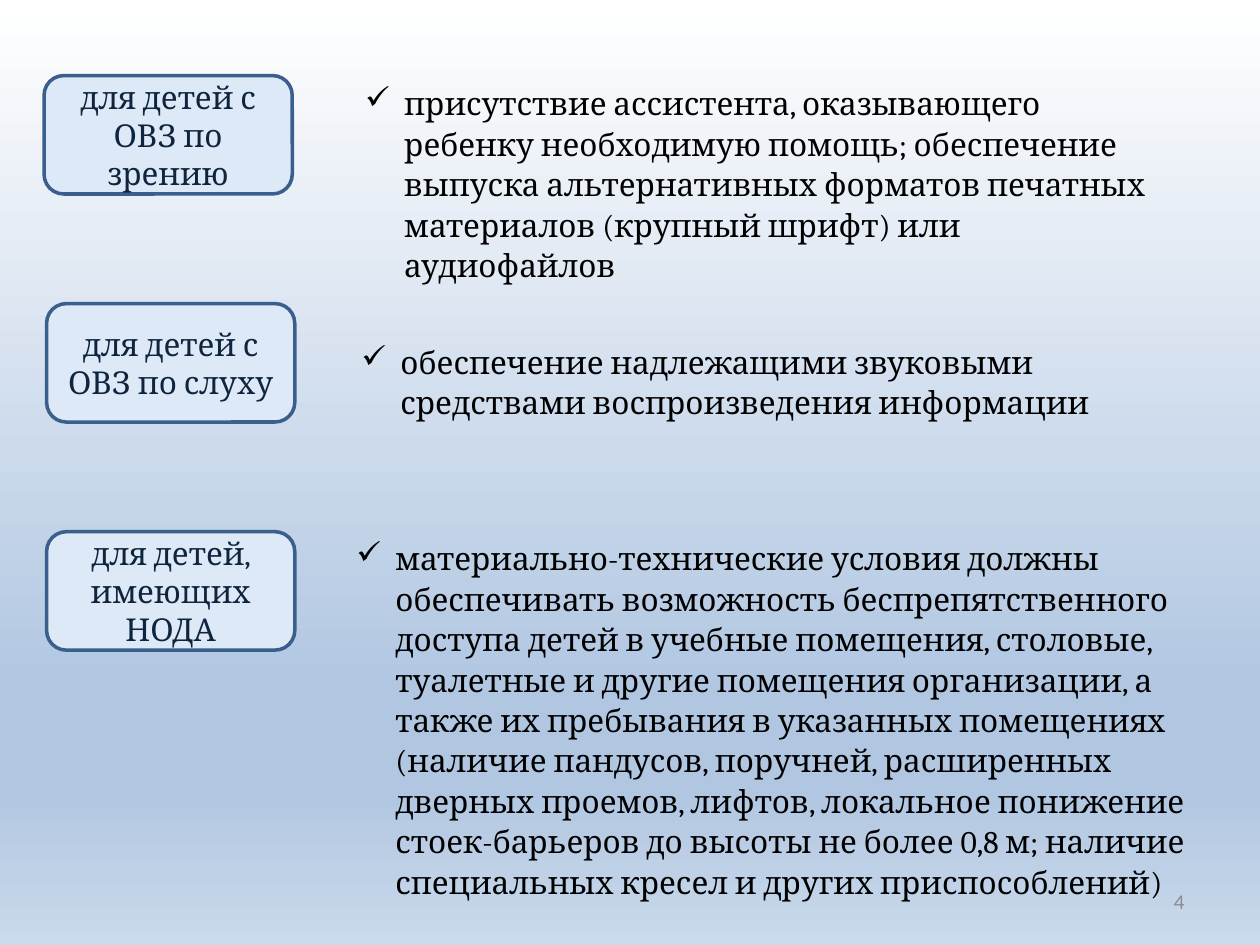
"""Build a slide on learning conditions for three groups of children."""
from dataclasses import dataclass

from lxml.etree import SubElement
from pptx import Presentation
from pptx.dml.color import RGBColor
from pptx.enum.shapes import MSO_SHAPE
from pptx.enum.text import MSO_ANCHOR, PP_ALIGN
from pptx.oxml.ns import qn
from pptx.slide import Slide
from pptx.text.text import TextFrame
from pptx.util import Inches, Pt

BLACK = RGBColor(0x00, 0x00, 0x00)
GREY = RGBColor(0x8C, 0x8C, 0x8C)
NAVY = RGBColor(0x0F, 0x24, 0x3E)
BLUE = RGBColor(0x3A, 0x5F, 0x8C)
PALE_BLUE = RGBColor(0xDD, 0xE9, 0xF7)
BACKGROUND_STOPS = (
    (0, RGBColor(0xFF, 0xFF, 0xFF)),
    (74, RGBColor(0xB0, 0xC6, 0xE1)),
    (83, RGBColor(0xB0, 0xC6, 0xE1)),
    (100, RGBColor(0xCA, 0xD9, 0xEB)),
)
LABEL_TOP, LABEL_STEP = 0.6, 1.81
LABEL_WIDTH, LABEL_HEIGHT = 1.97, 0.94
INDENT = 0.31


@dataclass(frozen=True)
class Group:
    """A group of children and the conditions it needs."""
    label: str
    label_left: float
    conditions: str
    box: tuple[float, float, float, float]


GROUPS = (
    Group("для детей с ОВЗ по зрению", 0.35,
          "присутствие ассистента, оказывающего ребенку необходимую помощь; "
          "обеспечение выпуска альтернативных форматов печатных материалов "
          "(крупный шрифт) или аудиофайлов",
          (2.8, 0.6, 6.61, 1.4)),
    Group("для детей с ОВЗ по слуху", 0.37,
          "обеспечение надлежащими звуковыми средствами воспроизведения информации",
          (2.77, 2.65, 6.83, 0.75)),
    Group("для детей, имеющих НОДА", 0.37,
          "материально-технические условия должны обеспечивать возможность "
          "беспрепятственного доступа детей в учебные помещения, столовые, "
          "туалетные и другие помещения организации, а также их пребывания в "
          "указанных помещениях (наличие пандусов, поручней, расширенных дверных "
          "проемов, лифтов, локальное понижение стоек-барьеров до высоты не более "
          "0,8 м; наличие специальных кресел и других приспособлений)",
          (2.73, 4.21, 6.86, 2.69)),
)


def write_text(tf: TextFrame, text: str, *, color: RGBColor, size: int = 18,
               font: str = "Cambria", align: PP_ALIGN = PP_ALIGN.LEFT,
               anchor: MSO_ANCHOR = MSO_ANCHOR.TOP, bullet: str = "",
               spacing: float = 1.0) -> None:
    """Write one formatted paragraph, with a hanging bullet if one is given."""
    tf.word_wrap = True
    tf.vertical_anchor = anchor
    p = tf.paragraphs[0]
    p.alignment = align
    p.line_spacing = spacing
    if bullet:
        p_pr = p._p.get_or_add_pPr()
        p_pr.set("marL", str(Inches(INDENT)))
        p_pr.set("indent", str(-Inches(INDENT)))
        SubElement(p_pr, qn("a:buChar"), char=bullet)
    r = p.add_run()
    r.text = text
    r.font.name = font
    r.font.size = Pt(size)
    r.font.color.rgb = color


def paint_background(s: Slide) -> None:
    """Fill the background with a vertical gradient."""
    fill = s.background.fill
    fill.gradient()
    fill.gradient_angle = 270
    stops = next(s._element.iter(qn("a:gsLst")))
    stops.clear()
    for position, color in BACKGROUND_STOPS:
        stop = SubElement(stops, qn("a:gs"), pos=str(position * 1000))
        SubElement(stop, qn("a:srgbClr"), val=str(color))


def add_text_box(s: Slide, box: tuple[float, float, float, float]) -> TextFrame:
    """Add a text box placed in inches and return its text frame."""
    return s.shapes.add_textbox(*map(Inches, box)).text_frame


def add_label(s: Slide, group: Group, top: float) -> None:
    """Add the rounded label that names a group."""
    sp = s.shapes.add_shape(MSO_SHAPE.ROUNDED_RECTANGLE, Inches(group.label_left),
                            Inches(top), Inches(LABEL_WIDTH), Inches(LABEL_HEIGHT))
    sp.shadow.inherit = False
    sp.fill.solid()
    sp.fill.fore_color.rgb = PALE_BLUE
    sp.line.color.rgb = BLUE
    sp.line.width = Pt(2)
    write_text(sp.text_frame, group.label, color=NAVY, align=PP_ALIGN.CENTER,
               anchor=MSO_ANCHOR.MIDDLE)


def main() -> None:
    """Build and save the slide."""
    prs = Presentation()
    prs.slide_width, prs.slide_height = Inches(10), Inches(7.5)
    s = prs.slides.add_slide(prs.slide_layouts[6])
    paint_background(s)
    write_text(add_text_box(s, (7.17, 6.95, 2.33, 0.4)), "4", color=GREY, size=12,
               font="Calibri", align=PP_ALIGN.RIGHT, anchor=MSO_ANCHOR.MIDDLE)
    for i, group in enumerate(GROUPS):
        add_label(s, group, LABEL_TOP + i * LABEL_STEP)
        write_text(add_text_box(s, group.box), group.conditions, color=BLACK,
                   bullet="✓", spacing=1.07)
    prs.save("out.pptx")


if __name__ == "__main__":
    main()
